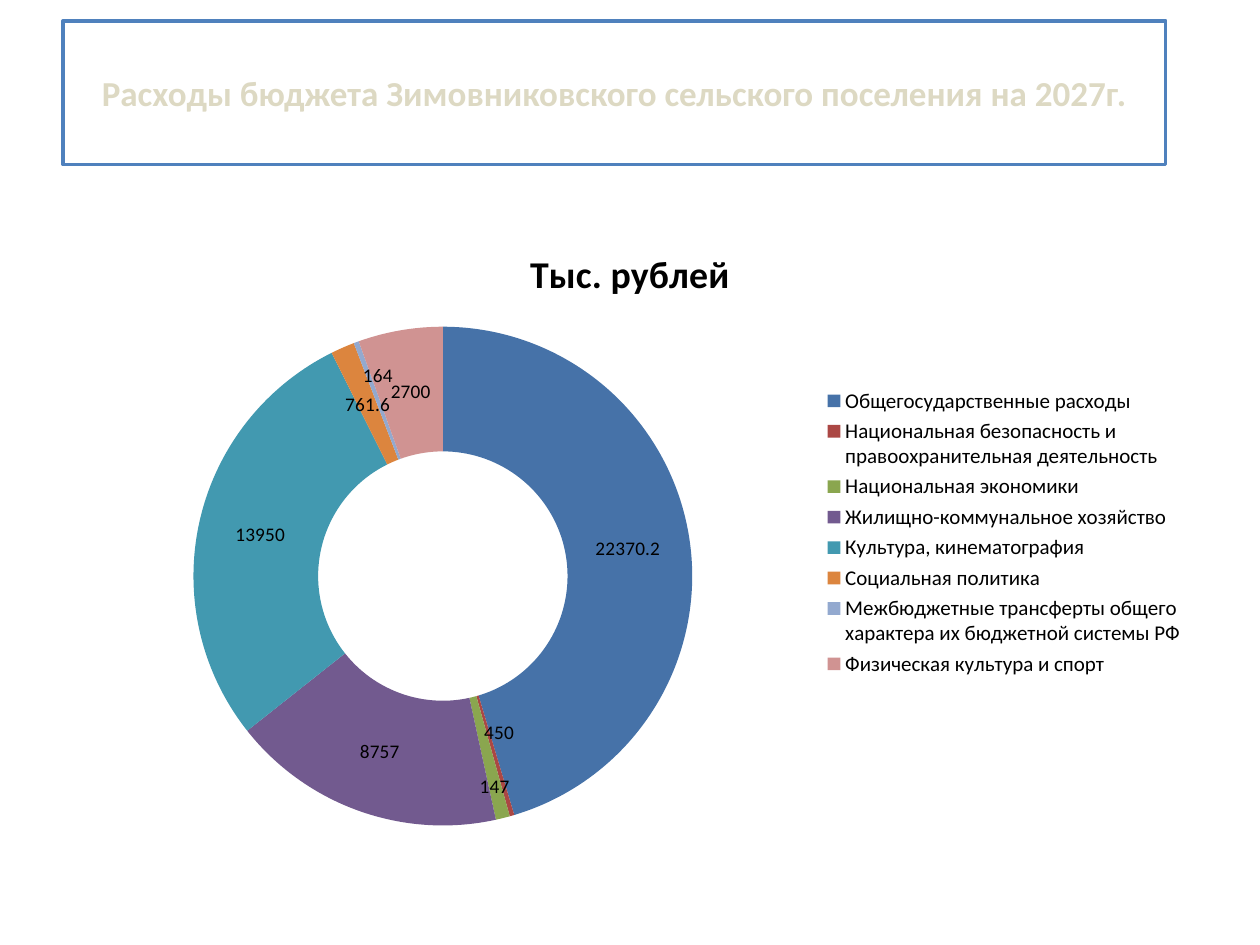
from lxml import etree
from pptx import Presentation
from pptx.chart.data import CategoryChartData
from pptx.dml.color import RGBColor
from pptx.enum.chart import XL_CHART_TYPE, XL_LEGEND_POSITION
from pptx.enum.shapes import MSO_SHAPE
from pptx.enum.text import MSO_ANCHOR, PP_ALIGN
from pptx.oxml.ns import qn
from pptx.util import Cm, Pt

WHITE = RGBColor(0xFF, 0xFF, 0xFF)
BLACK = RGBColor(0, 0, 0)
CREAM = RGBColor(0xDD, 0xD9, 0xC3)
BORDER_BLUE = RGBColor(0x4F, 0x81, 0xBD)
FONT = "Calibri"

EXPENSES = [
    ("Общегосударственные расходы", 22370.2, RGBColor(0x46, 0x72, 0xA8)),
    ("Национальная безопасность и правоохранительная деятельность", 147, RGBColor(0xAB, 0x47, 0x44)),
    ("Национальная экономики", 450, RGBColor(0x8A, 0xA6, 0x4F)),
    ("Жилищно-коммунальное хозяйство", 8757, RGBColor(0x72, 0x5A, 0x8F)),
    ("Культура, кинематография", 13950, RGBColor(0x42, 0x99, 0xB0)),
    ("Социальная политика", 761.6, RGBColor(0xDC, 0x85, 0x3E)),
    ("Межбюджетные трансферты общего характера их бюджетной системы РФ", 164, RGBColor(0x93, 0xA9, 0xCF)),
    ("Физическая культура и спорт", 2700, RGBColor(0xD0, 0x93, 0x92)),
]
# Labels of thin slices moved apart: index -> (x, y) as fractions of the chart
LABEL_SHIFTS = {1: (0, 0.05), 2: (0.01, -0.04), 6: (0, -0.04)}


def set_layout(parent, position, **settings):
    """Give a chart element a manual layout, placed at a child position."""
    for old in parent.findall(qn("c:layout")):
        parent.remove(old)
    layout = etree.Element(qn("c:layout"))
    manual = etree.SubElement(layout, qn("c:manualLayout"))
    for name, value in settings.items():
        etree.SubElement(manual, qn(f"c:{name}")).set("val", str(value))
    parent.insert(position, layout)


def style_font(font, size, color=BLACK, bold=False):
    font.name = FONT
    font.size = Pt(size)
    font.bold = bold
    font.color.rgb = color


deck = Presentation()
deck.slide_width, deck.slide_height = Cm(25.4), Cm(19.05)
page = deck.slides.add_slide(deck.slide_layouts[6])

# Heading
heading = page.shapes.add_shape(MSO_SHAPE.RECTANGLE, Cm(1.27), Cm(0.42), Cm(22.23), Cm(2.9))
heading.shadow.inherit = False
heading.fill.solid()
heading.fill.fore_color.rgb = WHITE
heading.line.color.rgb = BORDER_BLUE
heading.line.width = Pt(2)
frame = heading.text_frame
frame.word_wrap = True
frame.vertical_anchor = MSO_ANCHOR.MIDDLE
frame.text = "Расходы бюджета Зимовниковского сельского поселения на 2027г."
frame.paragraphs[0].alignment = PP_ALIGN.CENTER
style_font(frame.paragraphs[0].runs[0].font, 20, CREAM, bold=True)

# Doughnut of expenses
data = CategoryChartData()
data.categories = [name for name, _, _ in EXPENSES]
data.add_series("Series 1", [value for _, value, _ in EXPENSES])
chart = page.shapes.add_chart(
    XL_CHART_TYPE.DOUGHNUT, Cm(1.27), Cm(4.45), Cm(22.86), Cm(12.57), data
).chart
style_font(chart.font, 18)
chart.has_title = True
chart.chart_title.text_frame.text = "Тыс. рублей"
style_font(chart.chart_title.text_frame.paragraphs[0].runs[0].font, 21.6, bold=True)
chart.chart_title.include_in_layout = False

chart.has_legend = True
chart.legend.position = XL_LEGEND_POSITION.RIGHT
chart.legend.include_in_layout = False
style_font(chart.legend.font, 12)
set_layout(chart.legend._element, 1, xMode="edge", yMode="edge", x=0.66, y=0.26, w=0.34, h=0.48)

plot_area = chart._chartSpace.chart.plotArea
set_layout(plot_area, 0, layoutTarget="inner", xMode="edge", yMode="edge",
           x=0.11, y=0.17, w=0.45, h=0.8)

plot = chart.plots[0]
plot.vary_by_categories = True
plot._element.find(qn("c:holeSize")).set("val", "50")
series = plot.series[0]
labels = series.data_labels
labels.show_value = True
labels.show_percentage = False
style_font(labels.font, 11)
for index, (_, _, color) in enumerate(EXPENSES):
    fill = series.points[index].format.fill
    fill.solid()
    fill.fore_color.rgb = color
for index, (x, y) in LABEL_SHIFTS.items():
    style_font(series.points[index].data_label.font, 11)
    newest_label = labels._element.findall(qn("c:dLbl"))[-1]
    set_layout(newest_label, 1, x=x, y=y)

deck.save("out.pptx")
